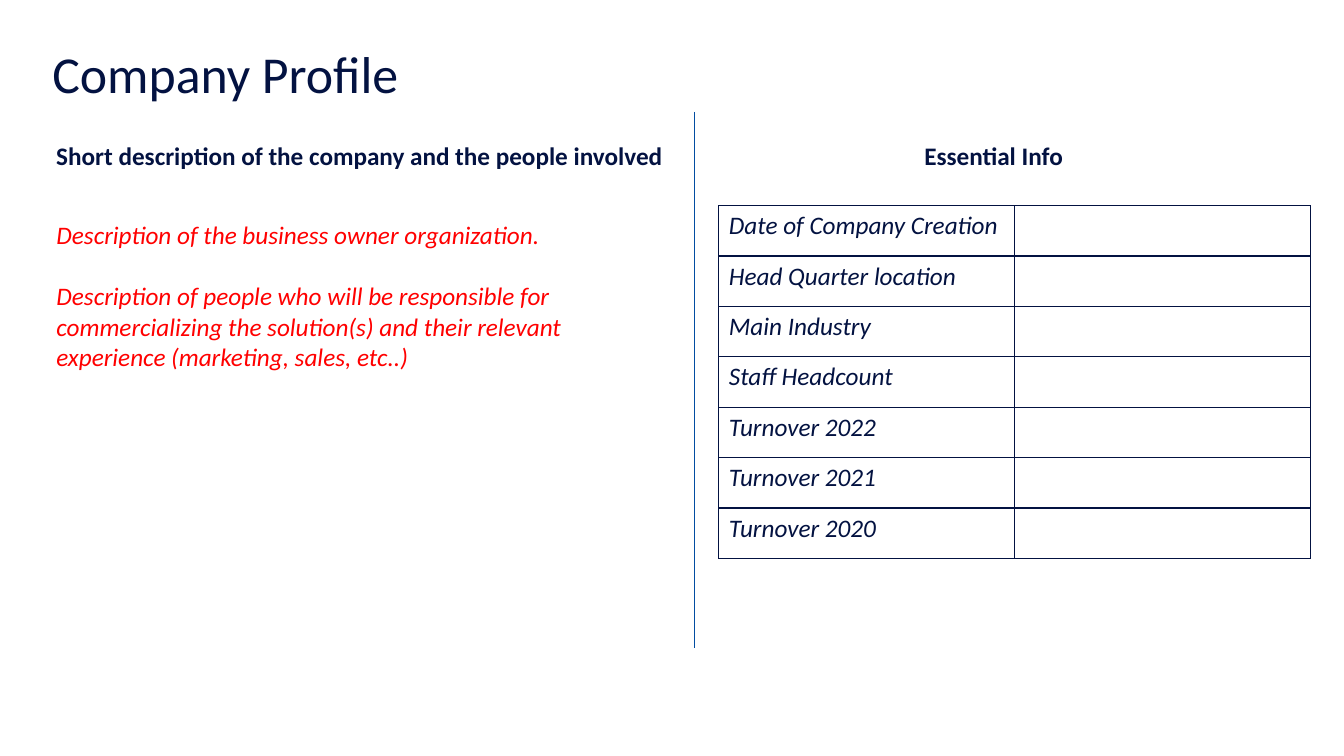
from lxml.etree import SubElement
from pptx import Presentation
from pptx.dml.color import RGBColor
from pptx.enum.shapes import MSO_CONNECTOR as Connector
from pptx.enum.text import MSO_ANCHOR as Anchor, MSO_AUTO_SIZE as AutoSize, PP_ALIGN as Align
from pptx.oxml.ns import qn
from pptx.util import Pt

PX = 9144
NAVY, BLUE, RED = "031241", "024DA1", "FF0000"
INFO_LABELS = ["Date of Company Creation", "Head Quarter location", "Main Industry",
               "Staff Headcount", "Turnover 2022", "Turnover 2021", "Turnover 2020"]
DESCRIPTION = [
    "Description of the business owner organization.",
    "Description of people who will be responsible for commercializing "
    "the solution(s) and their relevant experience (marketing, sales, etc..)",
]


def px(length):
    return length * PX


def color(value):
    return RGBColor.from_string(value)


def style(para, size, fill, bold=False, italic=False):
    for run in para.runs:
        font = run.font
        font.name, font.size, font.bold, font.italic = "Calibri", Pt(size), bold, italic
        font.color.rgb = color(fill)


def place(shape, box):
    shape.left, shape.top, shape.width, shape.height = map(px, box)


def add_title(page, box):
    title = page.shapes.title
    place(title, box)
    frame = title.text_frame
    frame.text = "Company Profile"
    frame.auto_size = AutoSize.NONE
    frame.vertical_anchor = Anchor.TOP
    frame.margin_left = frame.margin_right = frame.margin_bottom = 0
    frame.margin_top = px(3)
    para = frame.paragraphs[0]
    para.alignment = Align.LEFT
    para.line_spacing = 0.8
    style(para, 37, NAVY)


def add_heading(page, box, text, align):
    frame = page.shapes.add_textbox(*map(px, box)).text_frame
    frame.word_wrap = True
    frame.text = text
    para = frame.paragraphs[0]
    para.alignment = align
    style(para, 18, NAVY, bold=True)


def add_description(page, box):
    body = page.placeholders[1]
    place(body, box)
    frame = body.text_frame
    frame.auto_size = AutoSize.NONE
    frame.text = "\n".join(DESCRIPTION)
    for index, para in enumerate(frame.paragraphs):
        properties = para._p.get_or_add_pPr()
        properties.set("marL", "0")
        properties.set("indent", "0")
        SubElement(properties, qn("a:buNone"))
        para.space_before = Pt(22 if index else 0)
        style(para, 18, RED, italic=True)


def add_divider(page, x, top, bottom):
    line = page.shapes.add_connector(Connector.STRAIGHT, px(x), px(top), px(x), px(bottom))
    line.line.color.rgb = color(BLUE)
    line.line.width = Pt(0.5)
    SubElement(line._element.spPr, qn("a:effectLst"))


def add_borders(cell):
    properties = cell._tc.get_or_add_tcPr()
    for side in ("lnL", "lnR", "lnT", "lnB"):
        border = SubElement(properties, qn(f"a:{side}"), w=str(Pt(1)))
        fill = SubElement(border, qn("a:solidFill"))
        SubElement(fill, qn("a:srgbClr"), val=NAVY)


def add_info_table(page, box):
    table = page.shapes.add_table(len(INFO_LABELS), 2, *map(px, box)).table
    table.first_row = table.horz_banding = False
    for row, label in enumerate(INFO_LABELS):
        table.cell(row, 0).text = label
        style(table.cell(row, 0).text_frame.paragraphs[0], 18, NAVY, italic=True)
    for cell in table.iter_cells():
        add_borders(cell)
        cell.fill.background()


def main():
    deck = Presentation()
    deck.slide_width, deck.slide_height = px(1333), px(750)
    page = deck.slides.add_slide(deck.slide_layouts[1])
    add_title(page, (52, 50, 1229, 107))
    add_heading(page, (46, 134, 637, 40),
                "Short description of the company and the people involved", Align.LEFT)
    add_divider(page, 689, 111, 643)
    add_description(page, (46, 213, 599, 162))
    add_heading(page, (667, 134, 637, 40), "Essential Info", Align.CENTER)
    add_info_table(page, (713, 204, 587, 350))
    deck.save("out.pptx")


if __name__ == "__main__":
    main()
